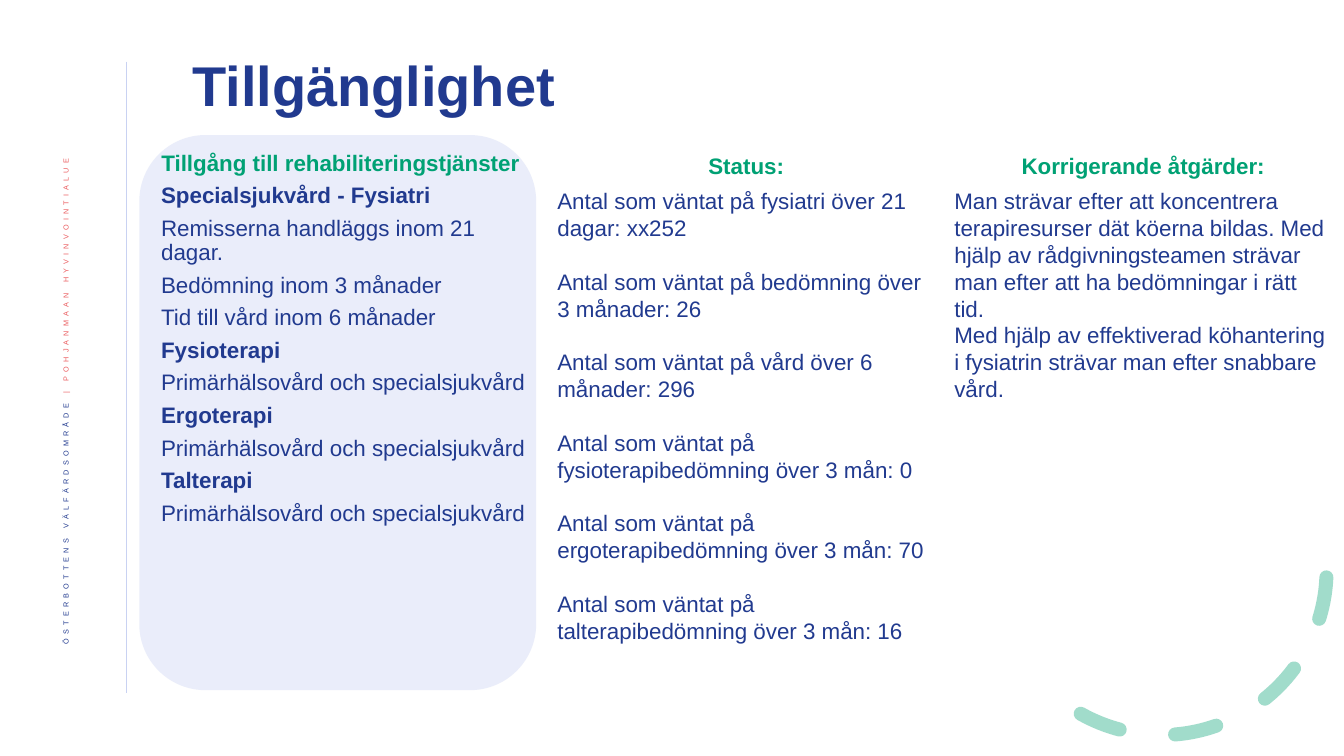
from lxml.etree import SubElement
from pptx import Presentation
from pptx.dml.color import RGBColor
from pptx.enum.dml import MSO_LINE
from pptx.enum.shapes import MSO_CONNECTOR, MSO_SHAPE
from pptx.enum.text import MSO_ANCHOR, PP_ALIGN
from pptx.oxml.ns import qn
from pptx.util import Pt

NAVY = RGBColor(0x21, 0x3A, 0x8F)
GREEN = RGBColor(0x00, 0xA1, 0x74)
CORAL = RGBColor(0xEB, 0x5C, 0x5F)
LAVENDER = RGBColor(0xC9, 0xD2, 0xF2)

# Content
TITLE = "Tillgänglighet"
SIDE_TEXT = [("ÖSTERBOTTENS VÄLFÄRDSOMRÅDE ", NAVY),
             ("| POHJANMAAN HYVINVOINTIALUE ", CORAL)]
CARE_LEVELS = "Primärhälsovård och specialsjukvård"
SUBHEADS = {"Specialsjukvård - Fysiatri", "Fysioterapi", "Ergoterapi", "Talterapi"}
COLUMNS = [
    dict(left=108, width=275, height=324, line_spacing=0.9, gap=6,
         head="Tillgång till rehabiliteringstjänster ",
         lines=["Specialsjukvård - Fysiatri",
                "Remisserna handläggs inom 21 dagar.",
                "Bedömning inom 3 månader",
                "Tid till vård inom 6 månader",
                "Fysioterapi", CARE_LEVELS,
                "Ergoterapi", CARE_LEVELS,
                "Talterapi", CARE_LEVELS]),
    dict(left=391, width=284, height=401, line_spacing=1.0, gap=19.2,
         head="Status:",
         lines=["Antal som väntat på fysiatri över 21 dagar: xx252",
                "Antal som väntat på bedömning över 3 månader: 26",
                "Antal som väntat på vård över 6 månader: 296",
                "Antal som väntat på fysioterapibedömning över 3 mån: 0",
                "Antal som väntat på ergoterapibedömning över 3 mån: 70",
                "Antal som väntat på talterapibedömning över 3 mån: 16"]),
    dict(left=674.6, width=284, height=188, line_spacing=1.0, gap=0,
         head="Korrigerande åtgärder:",
         lines=["Man strävar efter att koncentrera terapiresurser dät köerna "
                "bildas. Med hjälp av rådgivningsteamen strävar man efter att "
                "ha bedömningar i rätt tid.",
                "Med hjälp av effektiverad köhantering i fysiatrin strävar man "
                "efter snabbare vård."]),
]
COLUMN_TOP = 105


def add_span(para, text, size, color, bold=False):
    span = para.add_run()
    span.text = text
    span.font.color.rgb = color
    for name, value in dict(name="Arial", size=Pt(size), bold=bold).items():
        setattr(span.font, name, value)
    return span


def format_para(para, **values):
    for name, value in values.items():
        setattr(para, name, value)


def add_box(left, top, width, height):
    box = page.shapes.add_textbox(Pt(left), Pt(top), Pt(width), Pt(height))
    box.text_frame.word_wrap = True
    return box.text_frame


def set_alpha(fill, percent):
    color = fill._xPr.find(".//" + qn("a:srgbClr"))
    SubElement(color, qn("a:alpha")).set("val", str(percent * 1000))


deck = Presentation()
deck.slide_width, deck.slide_height = Pt(960), Pt(540)
page = deck.slides.add_slide(deck.slide_layouts[5])

# Side rule and vertical text
rule = page.shapes.add_connector(MSO_CONNECTOR.STRAIGHT, Pt(90.3), Pt(44), Pt(90.3), Pt(495))
rule.line.color.rgb = LAVENDER
rule.line.width = Pt(0.5)
SubElement(rule._element.spPr, qn("a:effectLst"))

side = add_box(30, 102, 37.5, 412.5)
side.vertical_anchor = MSO_ANCHOR.MIDDLE
side._txBody.bodyPr.set("vert", "vert270")
format_para(side.paragraphs[0], alignment=PP_ALIGN.RIGHT, line_spacing=0.9)
for text, color in SIDE_TEXT:
    span = add_span(side.paragraphs[0], text, 9, color)
    span.font._element.set("baseline", "30000")
    span.font._element.set("spc", "300")

# Dashed arc
arc = page.shapes.add_shape(MSO_SHAPE.ARC, Pt(712), Pt(289.5), Pt(235.5), Pt(235.5))
arc.shadow.inherit = False
arc.rotation = 98.9
arc.adjustments[0], arc.adjustments[1] = 158.17, 17.81
arc.fill.background()
arc.line.color.rgb = GREEN
arc.line.width = Pt(10)
arc.line.dash_style = MSO_LINE.DASH
arc.line._ln.set("cap", "rnd")
set_alpha(arc.line.fill, 36)

# Title
title = page.shapes.title
for name, value in dict(left=130.3, top=32.5, width=734, height=61).items():
    setattr(title, name, Pt(value))
title.text_frame.vertical_anchor = MSO_ANCHOR.MIDDLE
format_para(title.text_frame.paragraphs[0], alignment=PP_ALIGN.LEFT, line_spacing=0.9)
add_span(title.text_frame.paragraphs[0], TITLE, 40, NAVY, True)

# Panel behind the first column
panel = page.shapes.add_shape(MSO_SHAPE.ROUNDED_RECTANGLE, Pt(99.5), Pt(96.5), Pt(283.5), Pt(396.5))
panel.shadow.inherit = False
panel.fill.solid()
panel.fill.fore_color.rgb = LAVENDER
set_alpha(panel.fill, 38)
panel.line.fill.background()

# Three text columns
for column in COLUMNS:
    frame = add_box(column["left"], COLUMN_TOP, column["width"], column["height"])
    head = frame.paragraphs[0]
    format_para(head, alignment=PP_ALIGN.CENTER, space_after=Pt(6),
                line_spacing=column["line_spacing"])
    add_span(head, column["head"], 16, GREEN, True)
    for line in column["lines"]:
        para = frame.add_paragraph()
        format_para(para, alignment=PP_ALIGN.LEFT, space_after=Pt(column["gap"]),
                    line_spacing=column["line_spacing"])
        add_span(para, line, 16, NAVY, line in SUBHEADS)

deck.save("out.pptx")
